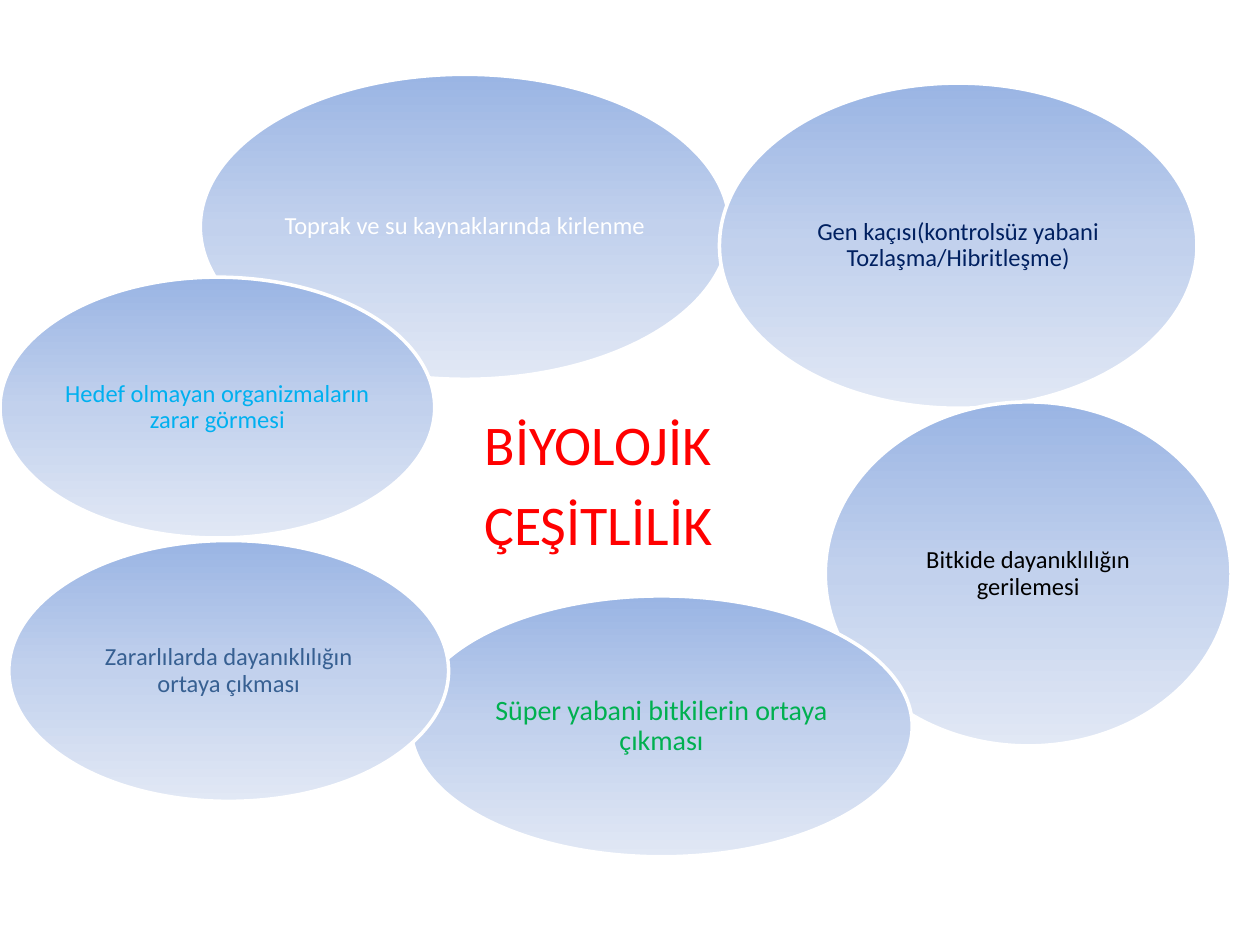
import copy

import pptx
import pptx.dml.color
import pptx.enum.shapes
import pptx.enum.text
import pptx.oxml.ns
import pptx.util

Inches = pptx.util.Inches
Pt = pptx.util.Pt


def color(value):
    return pptx.dml.color.RGBColor.from_string(value)


class SlideBuilder:
    font = "Calibri"
    outline = "FFFFFF"
    gradient = [(0, "9AB5E4"), (0.5, "C2D1ED"), (1, "E1E8F5")]

    def __init__(self, slide):
        self.slide = slide

    def fill_gradient(self, shape):
        shape.fill.gradient()
        shape.fill.gradient_angle = 270
        stop_list = shape._element.spPr.find(".//" + pptx.oxml.ns.qn("a:gsLst"))
        stop_list.insert(1, copy.deepcopy(stop_list[0]))
        for stop, (position, value) in zip(shape.fill.gradient_stops, self.gradient):
            stop.position = position
            stop.color.rgb = color(value)

    def add_text(self, shape, lines, size, text_color, inset):
        frame = shape.text_frame
        frame.word_wrap = True
        frame.vertical_anchor = pptx.enum.text.MSO_ANCHOR.MIDDLE
        frame.margin_left = frame.margin_right = Inches(inset)
        frame.margin_top = frame.margin_bottom = Inches(inset)
        frame.text = "\n".join(lines)
        for paragraph in frame.paragraphs:
            paragraph.alignment = pptx.enum.text.PP_ALIGN.CENTER
            paragraph.line_spacing = 0.9
            paragraph.space_after = Pt(size * 0.35)
            paragraph.font.name = self.font
            paragraph.font.size = Pt(size)
            paragraph.font.color.rgb = color(text_color)

    def ellipse(self, box, lines, size, text_color, inset=0.01, filled=True):
        shape = self.slide.shapes.add_shape(
            pptx.enum.shapes.MSO_SHAPE.OVAL, *map(Inches, box))
        shape.shadow.inherit = False
        shape.line.color.rgb = color(self.outline)
        shape.line.width = Pt(2)
        if filled:
            self.fill_gradient(shape)
        else:
            shape.fill.background()
        self.add_text(shape, lines, size, text_color, inset)


def main():
    presentation = pptx.Presentation()
    presentation.slide_width = Inches(10)
    presentation.slide_height = Inches(7.5)
    slide = presentation.slides.add_slide(presentation.slide_layouts[6])
    builder = SlideBuilder(slide)

    builder.ellipse((1.15, 2.58, 7.2, 2.57), ["BİYOLOJİK", "ÇEŞİTLİLİK"],
                    32, "FF0000", inset=0.02, filled=False)

    effects = [
        ((1.59, 0.59, 4.2, 2.42), "Toprak ve su kaynaklarında kirlenme", 14, "FFFFFF"),
        ((5.71, 0.66, 3.79, 2.58),
         "Gen kaçısı(kontrolsüz yabani Tozlaşma/Hibritleşme)", 14, "002060"),
        ((6.55, 3.19, 3.22, 2.73), "Bitkide dayanıklılığın gerilemesi", 14, "000000"),
        ((3.26, 4.73, 3.98, 2.07), "Süper yabani bitkilerin ortaya çıkması", 16, "00B050"),
        ((0.07, 4.29, 3.49, 2.07),
         "Zararlılarda dayanıklılığın ortaya çıkması", 14, "376092"),
        ((0, 2.2, 3.45, 2.07),
         "Hedef olmayan organizmaların zarar görmesi", 14, "00B0F0"),
    ]
    for box, text, size, text_color in effects:
        builder.ellipse(box, [text], size, text_color)

    presentation.save("out.pptx")


if __name__ == "__main__":
    main()
